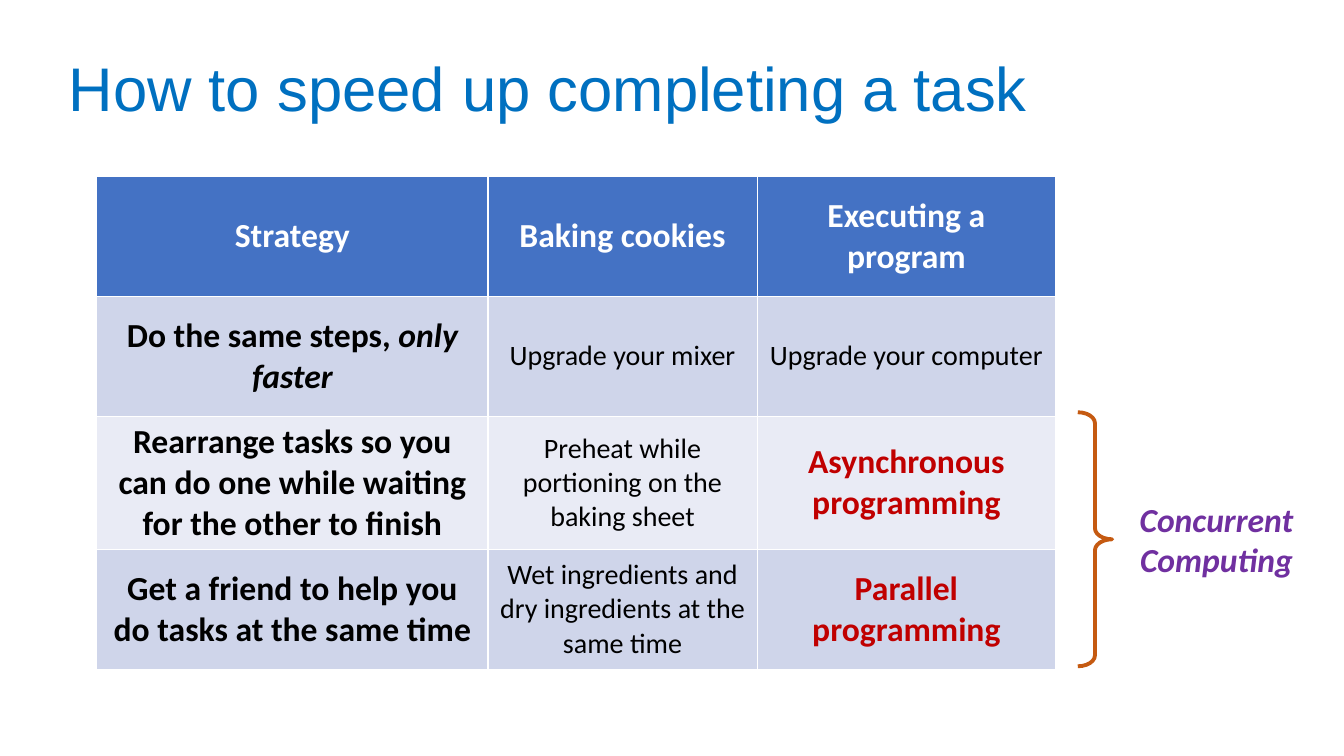
from pptx import Presentation
from pptx import util as u
from pptx.dml.color import RGBColor
from pptx.enum import shapes, text

WIDE, HIGH = u.Inches(13.33), u.Inches(7.5)
BLUE = RGBColor(0x00, 0x70, 0xC0)
HEAD = RGBColor(0x44, 0x72, 0xC4)
DARK = RGBColor(0xCF, 0xD5, 0xEA)
PALE = RGBColor(0xE9, 0xEB, 0xF5)
WHITE = RGBColor(0xFF, 0xFF, 0xFF)
BLACK = RGBColor(0x00, 0x00, 0x00)
RED = RGBColor(0xC0, 0x00, 0x00)
RUST = RGBColor(0xC5, 0x5A, 0x11)
PLUM = RGBColor(0x70, 0x30, 0xA0)

COLS = [3.88, 2.67, 2.96]
ROWS = [1.19, 1.19, 1.21, 1.19]
CELLS = [
    ["Strategy", "Baking cookies", "Executing a program"],
    [("Do the same steps, ", "only faster"), "Upgrade your mixer", "Upgrade your computer"],
    ["Rearrange tasks so you can do one while waiting for the other to finish",
     "Preheat while portioning on the baking sheet", "Asynchronous programming"],
    ["Get a friend to help you do tasks at the same time",
     "Wet ingredients and dry ingredients at the same time", "Parallel\nprogramming"],
]


def style(para, size, color, bold=False, name="Calibri", align=text.PP_ALIGN.CENTER):
    para.alignment = align
    font = para.font
    font.name, font.size, font.bold = name, u.Pt(size), bold
    font.color.rgb = color


def place(shape, left, top, width, height):
    shape.left, shape.top = u.Inches(left), u.Inches(top)
    shape.width, shape.height = u.Inches(width), u.Inches(height)


def add_title(slide, words):
    title = slide.shapes.title
    place(title, 0.58, 0.4, 11.84, 1.02)
    frame = title.text_frame
    frame.text = words
    frame.auto_size = text.MSO_AUTO_SIZE.NONE
    frame.vertical_anchor = text.MSO_ANCHOR.MIDDLE
    para = frame.paragraphs[0]
    para.line_spacing = 0.9
    style(para, 44, BLUE, name="Arial", align=text.PP_ALIGN.LEFT)


def look(row, col):
    if row == 0:
        return 24, WHITE, True
    if col == 0:
        return 24, BLACK, True
    if col == 2 and row > 1:
        return 24, RED, True
    return 20, BLACK, False


def fill_cell(cell, words, row, col):
    cell.fill.solid()
    cell.fill.fore_color.rgb = HEAD if row == 0 else DARK if row % 2 else PALE
    cell.vertical_anchor = text.MSO_ANCHOR.MIDDLE
    frame = cell.text_frame
    if isinstance(words, tuple):
        for part, slant in zip(words, (False, True)):
            run = frame.paragraphs[0].add_run()
            run.text, run.font.italic = part, slant
    else:
        frame.text = words
    for para in frame.paragraphs:
        style(para, *look(row, col))


def add_grid(slide):
    grid = slide.shapes.add_table(
        len(ROWS), len(COLS), u.Inches(0.96), u.Inches(1.75),
        u.Inches(sum(COLS)), u.Inches(sum(ROWS))).table
    for col, width in zip(grid.columns, COLS):
        col.width = u.Inches(width)
    for row, height in zip(grid.rows, ROWS):
        row.height = u.Inches(height)
    for r, line in enumerate(CELLS):
        for c, words in enumerate(line):
            fill_cell(grid.cell(r, c), words, r, c)


def add_brace(slide):
    brace = slide.shapes.add_shape(shapes.MSO_SHAPE.LEFT_BRACE, 0, 0, 0, 0)
    place(brace, 10.69, 4.09, 0.34, 2.52)
    brace.rotation = 180
    brace.adjustments[0] = 0.32
    brace.shadow.inherit = False
    brace.fill.background()
    brace.line.color.rgb = RUST
    brace.line.width = u.Pt(2.75)


def add_label(slide, words):
    box = slide.shapes.add_textbox(0, 0, 0, 0)
    place(box, 11.13, 4.9, 1.87, 0.91)
    frame = box.text_frame
    frame.word_wrap = True
    frame.auto_size = text.MSO_AUTO_SIZE.SHAPE_TO_FIT_TEXT
    frame.text = words
    style(frame.paragraphs[0], 24, PLUM, bold=True)
    frame.paragraphs[0].font.italic = True


def main():
    deck = Presentation()
    deck.slide_width, deck.slide_height = WIDE, HIGH
    slide = deck.slides.add_slide(deck.slide_layouts.get_by_name("Title Only"))
    add_title(slide, "How to speed up completing a task")
    add_grid(slide)
    add_brace(slide)
    add_label(slide, "Concurrent Computing")
    deck.save("out.pptx")


if __name__ == "__main__":
    main()
